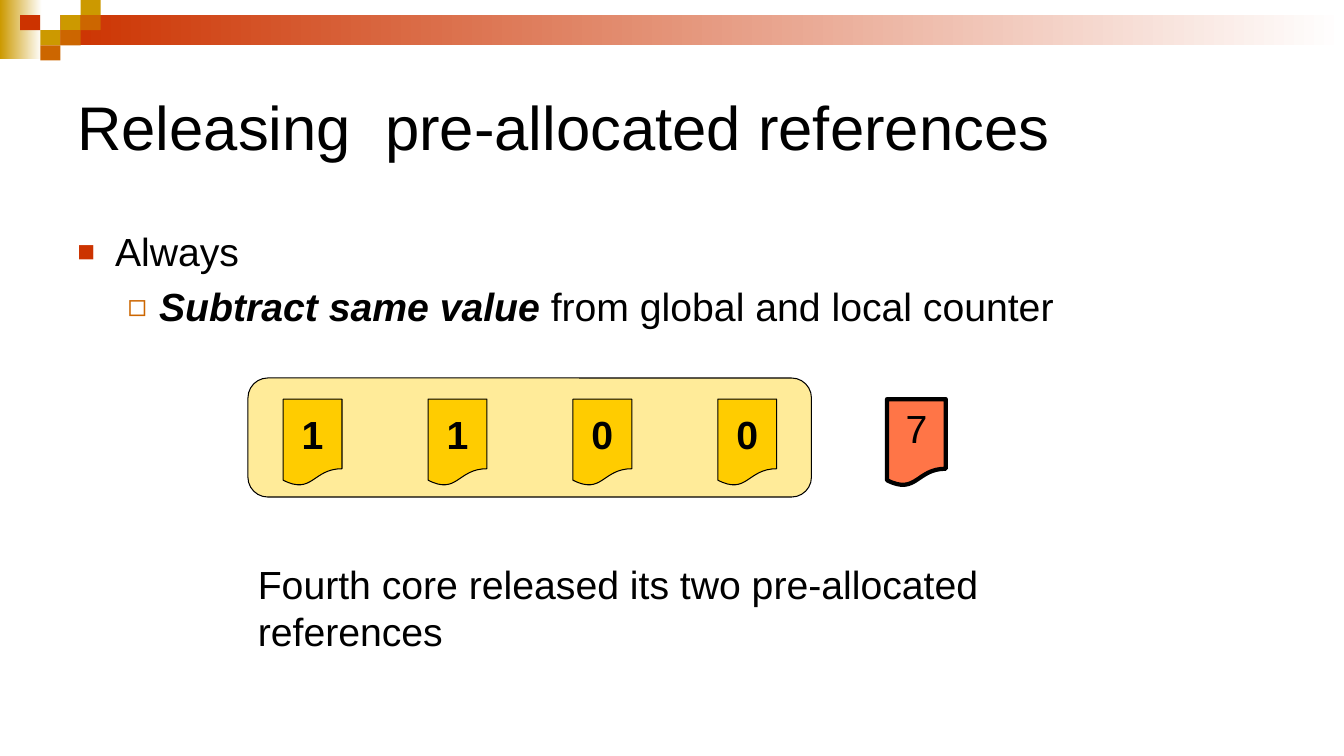
from lxml import etree
from pptx import Presentation
from pptx.dml.color import RGBColor
from pptx.enum import shapes, text
from pptx.oxml.ns import qn
from pptx.util import Pt

BLACK = RGBColor(0x00, 0x00, 0x00)
WHITE = RGBColor(0xFF, 0xFF, 0xFF)
RED = RGBColor(0xCC, 0x33, 0x00)
ORANGE = RGBColor(0xCC, 0x66, 0x00)
GOLD = RGBColor(0xCC, 0x99, 0x00)
YELLOW = RGBColor(0xFF, 0xCC, 0x00)
CREAM = RGBColor(0xFF, 0xEB, 0x99)
CORAL = RGBColor(0xFF, 0x75, 0x47)

# Content
TITLE = "Releasing  pre-allocated references"
# runs (text, emphasis), bullet, colour, size %, margin, indent
POINTS = [
    ([("Always", False)], "■", RED, 75, 27, -27),
    ([("Subtract same value ", True), ("from global and local counter", False)],
     "◻", ORANGE, 80, 58.5, -22.5),
]
NOTE = "Fourth core released its two pre-allocated references"
LOCAL = ["1", "1", "0", "0"]
TOTAL = "7"
FADES = [((0, 0, 30, 42), GOLD), ((43.2, 10.8, 916.8, 21.6), RED)]
# column, row, colour
TILES = [(3, 1, GOLD), (4, 0, GOLD), (4, 1, ORANGE), (2, 2, GOLD),
         (1, 1, RED), (3, 2, ORANGE), (2, 3, ORANGE)]
TILE_W, TILE_H = 14.4, 10.8
CARD_X, CARD_Y, CARD_W, CARD_H, STEP = 202.3, 285.1, 42, 62, 103.5

deck = Presentation()
deck.slide_width, deck.slide_height = Pt(960), Pt(540)
slide = deck.slides.add_slide(deck.slide_layouts[1])
KIND = shapes.MSO_SHAPE


def style(para, size, bold=None):
    font = para.font
    font.name, font.size, font.bold = "Arial", Pt(size), bold
    font.color.rgb = BLACK


def place(item, box):
    item.left, item.top, item.width, item.height = map(Pt, box)


def draw(kind, box, fill=None, line=0):
    item = slide.shapes.add_shape(kind, *map(Pt, box))
    item.shadow.inherit = False
    if fill is not None:
        item.fill.solid()
        item.fill.fore_color.rgb = fill
    if line:
        item.line.color.rgb = BLACK
        item.line.width = Pt(line)
    else:
        item.line.fill.background()
    return item


def card(x, label, fill, line, bold, anchor):
    item = draw(KIND.FLOWCHART_DOCUMENT, (x, CARD_Y, CARD_W, CARD_H), fill, line)
    frame = item.text_frame
    frame.text, frame.vertical_anchor = label, anchor
    para = frame.paragraphs[0]
    para.alignment = text.PP_ALIGN.CENTER
    style(para, 28, bold)


def bullet(para, mark, color, size, margin, indent):
    props = para._p.get_or_add_pPr()
    props.set("marL", str(Pt(margin)))
    props.set("indent", str(Pt(indent)))
    tint = etree.SubElement(props, qn("a:buClr"))
    etree.SubElement(tint, qn("a:srgbClr"), val=str(color))
    etree.SubElement(props, qn("a:buSzPct"), val=str(size * 1000))
    etree.SubElement(props, qn("a:buFont"), typeface="Arial")
    etree.SubElement(props, qn("a:buChar"), char=mark)


# Header band and tiles
for box, color in FADES:
    fade = draw(KIND.RECTANGLE, box)
    fade.fill.gradient()
    fade.fill.gradient_angle = 0
    for stop, spot, tone in zip(fade.fill.gradient_stops, (0, 1), (color, WHITE)):
        stop.position, stop.color.rgb = spot, tone
for col, row, color in TILES:
    draw(KIND.RECTANGLE, (col * TILE_W, row * TILE_H, TILE_W, TILE_H), color)

# Title
title = slide.shapes.title
place(title, (48, 36, 864, 108))
frame = title.text_frame
frame.text = TITLE
frame.auto_size = text.MSO_AUTO_SIZE.NONE
frame.vertical_anchor = text.MSO_ANCHOR.MIDDLE
frame.paragraphs[0].alignment = text.PP_ALIGN.LEFT
style(frame.paragraphs[0], 44)

# Bullet list
body = slide.placeholders[1]
place(body, (48, 159, 864, 306))
frame = body.text_frame
frame.auto_size = text.MSO_AUTO_SIZE.NONE
for level, (runs, *mark) in enumerate(POINTS):
    para = frame.add_paragraph() if level else frame.paragraphs[0]
    para.level = level
    style(para, 28)
    bullet(para, *mark)
    for words, strong in runs:
        run = para.add_run()
        run.text = words
        if strong:
            run.font.bold = run.font.italic = True

# Note
note = slide.shapes.add_textbox(*map(Pt, (177.1, 396.7, 620, 75)))
note.text_frame.word_wrap = True
note.text_frame.text = NOTE
style(note.text_frame.paragraphs[0], 28)

# Local counters and global counter
draw(KIND.FLOWCHART_ALTERNATE_PROCESS, (177.1, 270, 402.5, 85), CREAM, 0.75)
for i, label in enumerate(LOCAL):
    card(CARD_X + i * STEP, label, YELLOW, 0.75, True, text.MSO_ANCHOR.MIDDLE)
card(633.6, TOTAL, CORAL, 3, False, text.MSO_ANCHOR.TOP)

deck.save("out.pptx")
